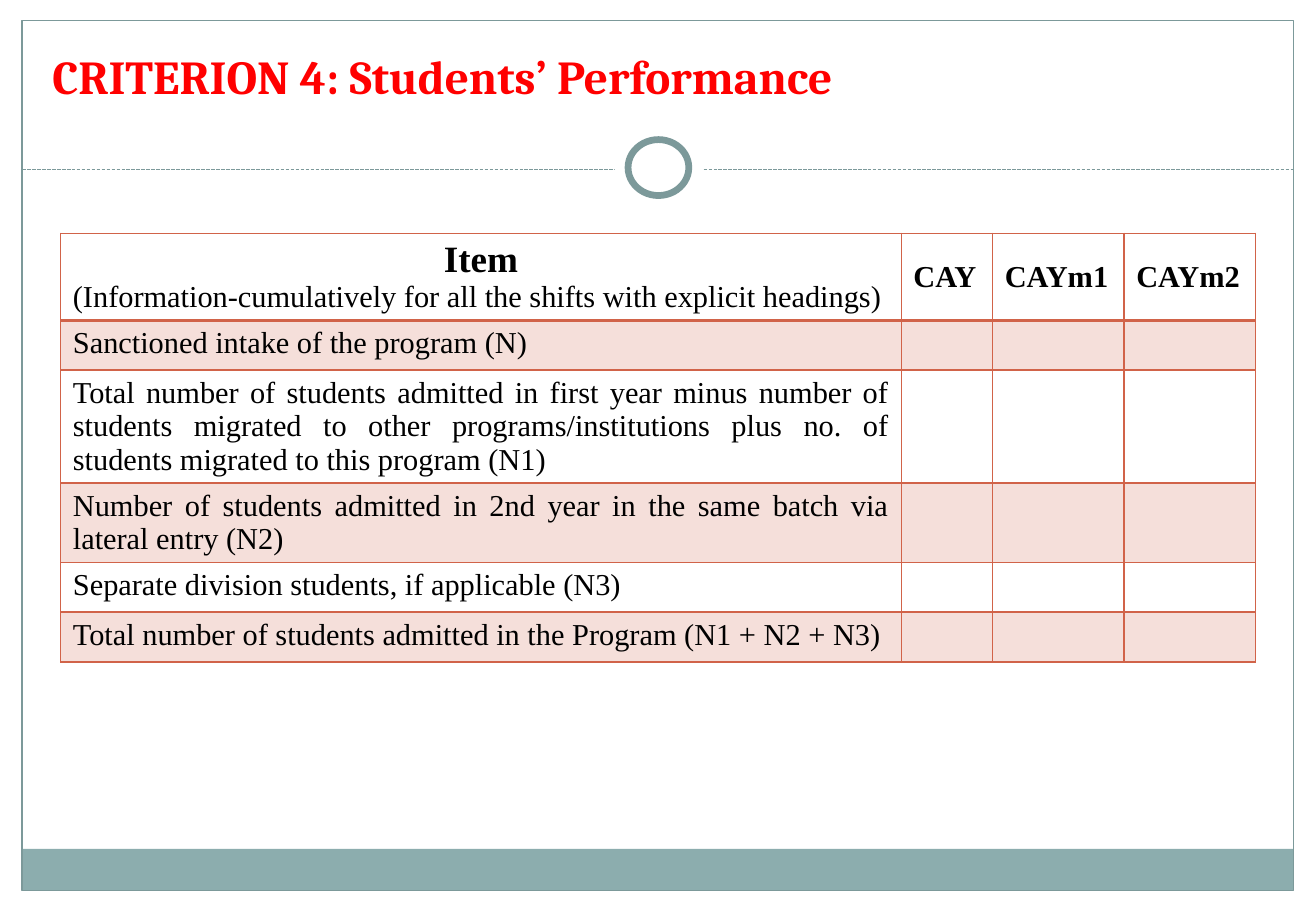
from lxml.etree import SubElement
from pptx import Presentation
from pptx.dml.color import RGBColor
from pptx.enum.dml import MSO_LINE
from pptx.enum.shapes import MSO_CONNECTOR, MSO_SHAPE
from pptx.enum.text import MSO_ANCHOR, MSO_AUTO_SIZE, PP_ALIGN
from pptx.oxml.ns import qn
from pptx.util import Cm, Pt

COLORS = {"title": "FF0000", "text": "000000", "paper": "FFFFFF",
          "frame": "7C999A", "footer": "8CADAE", "accent": "D16349"}
HEADINGS = ["CAY", "CAYm1", "CAYm2"]
ITEMS = [
    "Sanctioned intake of the program (N)",
    "Total number of students admitted in first year minus number of students "
    "migrated to other programs/institutions plus no. of students migrated to this program (N1)",
    "Number of students admitted in 2nd year in the same batch via lateral entry (N2)",
    "Separate division students, if applicable (N3)",
    "Total number of students admitted in the Program (N1 + N2 + N3)",
]
COL_WIDTHS = [17.57, 1.91, 2.75, 2.75]
ROW_HEIGHTS = [1.8, 1.04, 2.36, 1.66, 1.04, 1.04]


def rgb(name):
    return RGBColor.from_string(COLORS[name])


def write(p, text, size=18, font="Times New Roman", color="text", bold=False, align=PP_ALIGN.LEFT):
    p.alignment = align
    r = p.add_run()
    r.text = text
    r.font.size = Pt(size)
    r.font.name = font
    r.font.bold = bold
    r.font.color.rgb = rgb(color)


class SlideBuilder:
    def __init__(self, prs):
        self.s = prs.slides.add_slide(prs.slide_layouts[5])

    def title(self, text, x, y, w, h):
        sp = self.s.shapes.title
        sp.left, sp.top, sp.width, sp.height = Cm(x), Cm(y), Cm(w), Cm(h)
        tf = sp.text_frame
        tf.auto_size = MSO_AUTO_SIZE.NONE
        tf.vertical_anchor = MSO_ANCHOR.BOTTOM
        write(tf.paragraphs[0], text, size=28, font="Cambria", color="title",
              bold=True, align=PP_ALIGN.JUSTIFY)

    def shape(self, kind, x, y, w, h, fill=None, line=None, weight=0.75):
        sp = self.s.shapes.add_shape(kind, Cm(x), Cm(y), Cm(w), Cm(h))
        sp.shadow.inherit = False
        if fill:
            sp.fill.solid()
            sp.fill.fore_color.rgb = rgb(fill)
        else:
            sp.fill.background()
        if line:
            sp.line.color.rgb = rgb(line)
            sp.line.width = Pt(weight)
        else:
            sp.line.fill.background()

    def dashed_line(self, x1, y1, x2, y2):
        cx = self.s.shapes.add_connector(MSO_CONNECTOR.STRAIGHT, Cm(x1), Cm(y1), Cm(x2), Cm(y2))
        cx.line.color.rgb = rgb("frame")
        cx.line.width = Pt(0.75)
        cx.line.dash_style = MSO_LINE.SQUARE_DOT
        SubElement(cx._element.spPr, qn("a:effectLst"))

    def style_cell(self, cell, shaded, top=1, bottom=1):
        tcPr = cell._tc.get_or_add_tcPr()
        for side, weight in zip("LRTB", (1, 1, top, bottom)):
            ln = SubElement(tcPr, qn(f"a:ln{side}"), w=str(Pt(weight)))
            fill = SubElement(ln, qn("a:solidFill"))
            SubElement(fill, qn("a:srgbClr"), val=COLORS["accent"])
        if shaded:
            cell.fill.solid()
            cell.fill.fore_color.rgb = rgb("accent")
            clr = tcPr.find(qn("a:solidFill")).find(qn("a:srgbClr"))
            SubElement(clr, qn("a:alpha"), val="20000")
        else:
            cell.fill.background()

    def table(self, x, y):
        tbl = self.s.shapes.add_table(
            len(ROW_HEIGHTS), len(COL_WIDTHS), Cm(x), Cm(y),
            Cm(sum(COL_WIDTHS)), Cm(sum(ROW_HEIGHTS))).table
        tbl.first_row = tbl.horz_banding = False
        for col, width in zip(tbl.columns, COL_WIDTHS):
            col.width = Cm(width)
        for i, (row, height) in enumerate(zip(tbl.rows, ROW_HEIGHTS)):
            row.height = Cm(height)
            for cell in row.cells:
                self.style_cell(cell, i % 2 == 1, 2 if i == 1 else 1, 2 if i == 0 else 1)
        tf = tbl.cell(0, 0).text_frame
        write(tf.paragraphs[0], "Item", size=22, bold=True, align=PP_ALIGN.CENTER)
        write(tf.add_paragraph(),
              "(Information-cumulatively for all the shifts with explicit headings)")
        for j, heading in enumerate(HEADINGS, 1):
            cell = tbl.cell(0, j)
            cell.vertical_anchor = MSO_ANCHOR.MIDDLE
            write(cell.text_frame.paragraphs[0], heading, bold=True)
        for i, item in enumerate(ITEMS, 1):
            write(tbl.cell(i, 0).text_frame.paragraphs[0], item, align=PP_ALIGN.JUSTIFY)


def main():
    prs = Presentation()
    prs.slide_width, prs.slide_height = Cm(27.51), Cm(19.05)
    b = SlideBuilder(prs)
    b.shape(MSO_SHAPE.RECTANGLE, 0.46, 17.75, 26.58, 0.86, fill="footer")
    b.shape(MSO_SHAPE.RECTANGLE, 0.46, 0.43, 26.58, 18.19, line="frame")
    b.dashed_line(0.46, 3.55, 27.04, 3.55)
    b.shape(MSO_SHAPE.OVAL, 12.85, 2.67, 1.83, 1.7, fill="paper")
    b.shape(MSO_SHAPE.OVAL, 13.13, 2.92, 1.27, 1.17, fill="paper", line="frame", weight=4)
    b.title("CRITERION 4: Students’ Performance", 0.84, 1.47, 25.91, 0.84)
    b.table(1.27, 4.88)
    prs.save("out.pptx")


if __name__ == "__main__":
    main()
